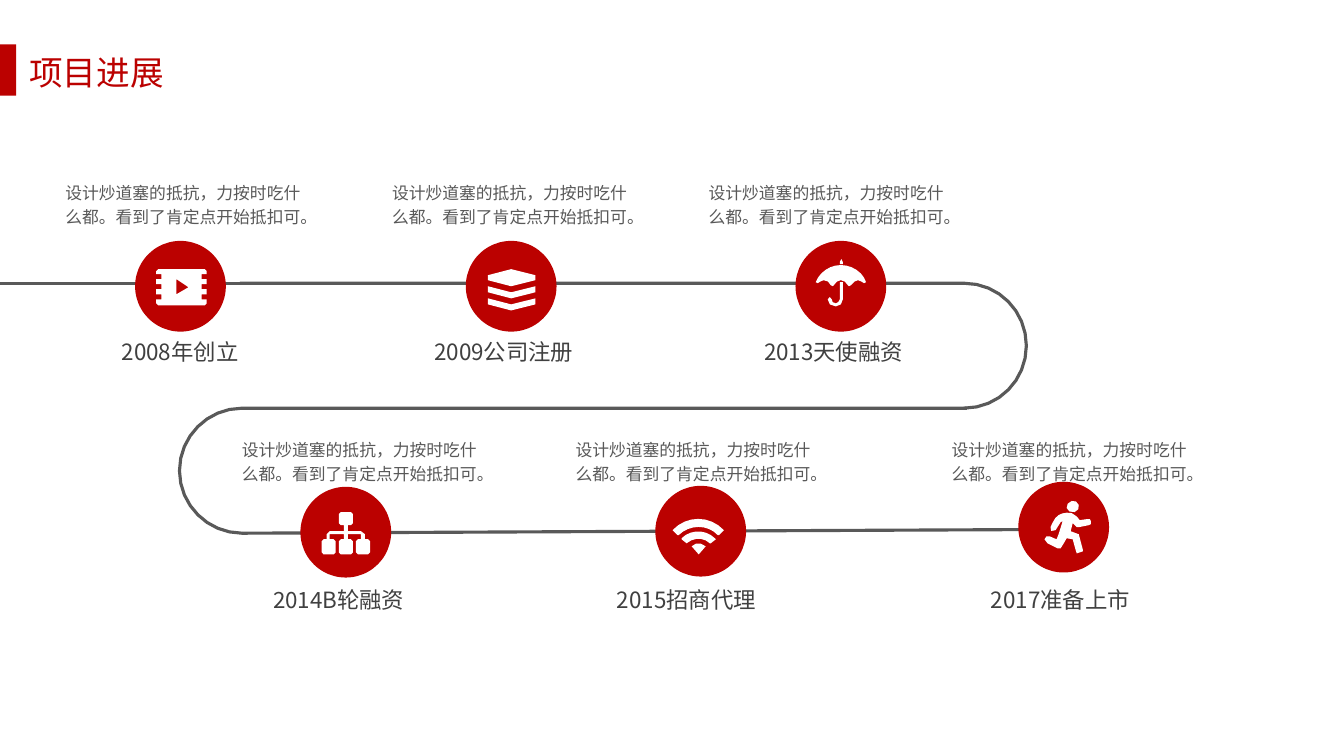
from math import dist

from lxml import etree
from pptx import Presentation
from pptx.dml.color import RGBColor
from pptx.enum.lang import MSO_LANGUAGE_ID
from pptx.enum.shapes import MSO_CONNECTOR, MSO_SHAPE
from pptx.enum.text import MSO_ANCHOR, MSO_AUTO_SIZE, PP_ALIGN
from pptx.oxml.ns import qn
from pptx.util import Pt

PX = 9144  # 100 px to the inch
STRAIGHT = MSO_CONNECTOR.STRAIGHT
OVAL, RECTANGLE = MSO_SHAPE.OVAL, MSO_SHAPE.RECTANGLE
TOP, LEFT, FIXED = MSO_ANCHOR.TOP, PP_ALIGN.LEFT, MSO_AUTO_SIZE.NONE
CHINESE = MSO_LANGUAGE_ID.SIMPLIFIED_CHINESE
FONT = "Noto Sans CJK SC"
HEX = {"red": "BB0100", "road": "595959", "label": "404040", "white": "FFFFFF"}
COLORS = {name: RGBColor.from_string(value) for name, value in HEX.items()}
DESCRIPTION = "设计炒道塞的抵抗，力按时吃什么都。看到了肯定点开始抵扣可。"


def trace(shapes, contours, close=True):
    """Draw contours whose steps are points (x, y) or Bezier curves (x1, y1, x2, y2, x, y)."""
    builder = None
    for contour in contours:
        points = []
        for step in contour:
            if len(step) == 2:
                points.append(step)
                continue
            (x0, y0), (x1, y1, x2, y2, x3, y3) = points[-1], step
            pieces = min(8, max(2, round(dist((x0, y0), (x3, y3)) / 5)))
            for t in (i / pieces for i in range(1, pieces + 1)):
                a, b, c, d = (1 - t) ** 3, 3 * t * (1 - t) ** 2, 3 * t * t * (1 - t), t ** 3
                points.append((a * x0 + b * x1 + c * x2 + d * x3,
                               a * y0 + b * y1 + c * y2 + d * y3))
        points = [(round(x * PX), round(y * PX)) for x, y in points]
        if builder is None:
            builder = shapes.build_freeform(*points[0], scale=1.0)
        else:
            builder.move_to(*points[0])
        builder.add_line_segments(points[1:], close=close)
    outline = builder.convert_to_shape()
    outline.shadow.inherit = False
    return outline


def write(box, left, top, width, height, text, size, color, spacing=1.0):
    box.left, box.top, box.width, box.height = (v * PX for v in (left, top, width, height))
    frame = box.text_frame
    frame.word_wrap = True
    frame.auto_size = FIXED
    frame.vertical_anchor = TOP
    paragraph = frame.paragraphs[0]
    paragraph.alignment = LEFT
    paragraph.line_spacing = spacing
    run = paragraph.add_run()
    run.text = text
    run.font.size = Pt(size)
    run.font.name = FONT
    run.font.language_id = CHINESE
    run.font.color.rgb = COLORS[color]
    etree.SubElement(run.font._element, qn("a:ea"), typeface=FONT)


prs = Presentation()
prs.slide_width, prs.slide_height = 1333 * PX, 750 * PX
slide = prs.slides.add_slide(prs.slide_layouts[5])

# Heading
write(slide.shapes.title, 19, 46, 196, 50, "项目进展", 24, "red")
marker = slide.shapes.add_shape(RECTANGLE, 0, 44 * PX, 16 * PX, 51 * PX)
marker.shadow.inherit = False
marker.fill.solid()
marker.fill.fore_color.rgb = COLORS["red"]
marker.line.fill.background()

# Winding road
road = []
for ends in [(0, 281, 261, 281), (240, 529, 1097, 525)]:
    stretch = slide.shapes.add_connector(STRAIGHT, *(v * PX for v in ends))
    etree.SubElement(stretch._element.spPr, qn("a:effectLst"))
    road.append(stretch)
right_bend = [(238, 281), (956, 281), (991, 281, 1018, 309, 1018, 343),
              (1018, 377, 991, 405, 956, 405)]
left_bend = [(959, 405), (240, 405), (206, 405, 178, 433, 178, 467),
             (178, 501, 206, 529, 240, 529)]
for bend in (right_bend, left_bend):
    turn = trace(slide.shapes, [bend], close=False)
    turn.fill.background()
    road.append(turn)
for stretch in road:
    stretch.line.color.rgb = COLORS["road"]
    stretch.line.width = Pt(2.25)

# Icons
perforations = [(x, y + dy) for y in (272, 282, 292)
                for x, dy in ((155, 0), (160, 0), (160, 5), (155, 5))]
film_left = [(157, 267), (155, 269)] + perforations + [(155, 301), (157, 303)]
film_right = [(360 - x, y) for x, y in reversed(film_left)]
film = [film_left + film_right, [(175, 277), (187, 285), (175, 292)]]

books = [[(484, 273), (507, 267), (531, 273), (531, 278), (507, 284), (484, 278)]]
books += [[(484, y), (507, y + 6), (531, y), (531, y + 6), (507, y + 12), (484, y + 6)]
          for y in (284, 296)]

umbrella = [
    [(809, 280), (813, 270, 823, 263, 834, 263), (845, 263, 856, 270, 859, 280),
     (857, 281), (855, 280, 853, 278, 851, 278), (849, 278, 846, 280, 844, 283),
     (842, 284), (841, 283), (839, 280, 837, 278, 834, 278),
     (831, 278, 829, 280, 827, 283), (826, 284), (824, 283),
     (823, 280, 820, 278, 817, 278), (815, 278, 813, 280, 811, 281)],
    [(836, 280), (836, 297), (836, 301, 833, 304, 829, 304), (824, 304, 821, 301, 821, 297),
     (821, 294, 825, 294, 825, 297), (825, 299, 826, 301, 829, 301),
     (830, 301, 833, 299, 833, 297), (833, 280)],
    [(833, 262), (833, 260), (833, 256, 836, 256, 836, 260), (836, 262)],
]

branches = [(324, 535), (324, 530), (327, 527), (341, 527), (341, 521), (345, 521),
            (345, 527), (358, 527), (362, 530), (362, 535), (358, 535), (358, 530),
            (345, 530), (345, 535), (341, 535), (341, 530), (327, 530), (327, 535)]
hierarchy = [branches]
for x, y, bottom in [(336, 508, 521), (319, 535, 550), (336, 535, 550), (353, 535, 550)]:
    right = x + 14
    hierarchy.append([(x + 2, y), (right - 2, y), (right, y + 2), (right, bottom - 2),
                      (right - 2, bottom), (x + 2, bottom), (x, bottom - 2), (x, y + 2)])

wireless = [
    [(700, 542), (695, 538, 690, 538, 686, 542), (693, 550)],
    [(710, 535), (709, 534), (700, 525, 685, 525, 676, 534), (676, 535), (681, 539),
     (688, 533, 698, 533, 704, 539), (705, 539)],
    [(718, 526), (704, 511, 681, 511, 667, 526), (672, 531), (673, 531),
     (684, 520, 702, 520, 712, 531), (713, 531)],
]

runner = [
    [(1080, 521), (1070, 523), (1068, 523), (1064, 519), (1062, 527), (1070, 530),
     (1074, 545), (1074, 547), (1071, 548), (1068, 549), (1067, 546), (1064, 535),
     (1058, 534), (1057, 534, 1054, 543, 1052, 544), (1049, 544), (1039, 539),
     (1036, 535), (1038, 532), (1041, 532), (1048, 535), (1050, 530), (1054, 517),
     (1052, 518), (1051, 519, 1050, 522, 1047, 526), (1044, 529, 1040, 526, 1042, 523),
     (1043, 520, 1047, 512, 1050, 511), (1053, 509, 1058, 508, 1063, 509),
     (1067, 510, 1070, 515, 1071, 516), (1078, 515), (1081, 515), (1082, 517),
     (1082, 520)],
    [(1066, 508), (1062, 509, 1059, 507, 1058, 504), (1058, 501, 1059, 498, 1063, 497),
     (1066, 496, 1069, 498, 1070, 501), (1071, 504, 1069, 507, 1066, 508)],
]

# Milestones: circle left and top, label left, top and text, description left and top, icon
milestones = [
    (134, 239, 111, 331, "2008年创立", 55, 172, film),
    (462, 239, 421, 331, "2009公司注册", 379, 172, books),
    (789, 239, 748, 331, "2013天使融资", 693, 172, umbrella),
    (298, 483, 261, 577, "2014B轮融资", 230, 427, hierarchy),
    (650, 482, 602, 577, "2015招商代理", 561, 427, wireless),
    (1010, 478, 973, 577, "2017准备上市", 934, 427, runner),
]
for (circle_left, circle_top, label_left, label_top, label,
     description_left, description_top, icon) in milestones:
    circle = slide.shapes.add_shape(OVAL, circle_left * PX, circle_top * PX, 90 * PX, 90 * PX)
    circle.shadow.inherit = False
    for part, color in ((circle, "red"), (trace(slide.shapes, icon), "white")):
        part.fill.solid()
        part.fill.fore_color.rgb = COLORS[color]
        part.line.fill.background()
    write(slide.shapes.add_textbox(0, 0, PX, PX), label_left, label_top, 173, 37,
          label, 16, "label")
    write(slide.shapes.add_textbox(0, 0, PX, PX), description_left, description_top, 264, 59,
          DESCRIPTION, 12, "road", 1.2)

prs.save("out.pptx")
